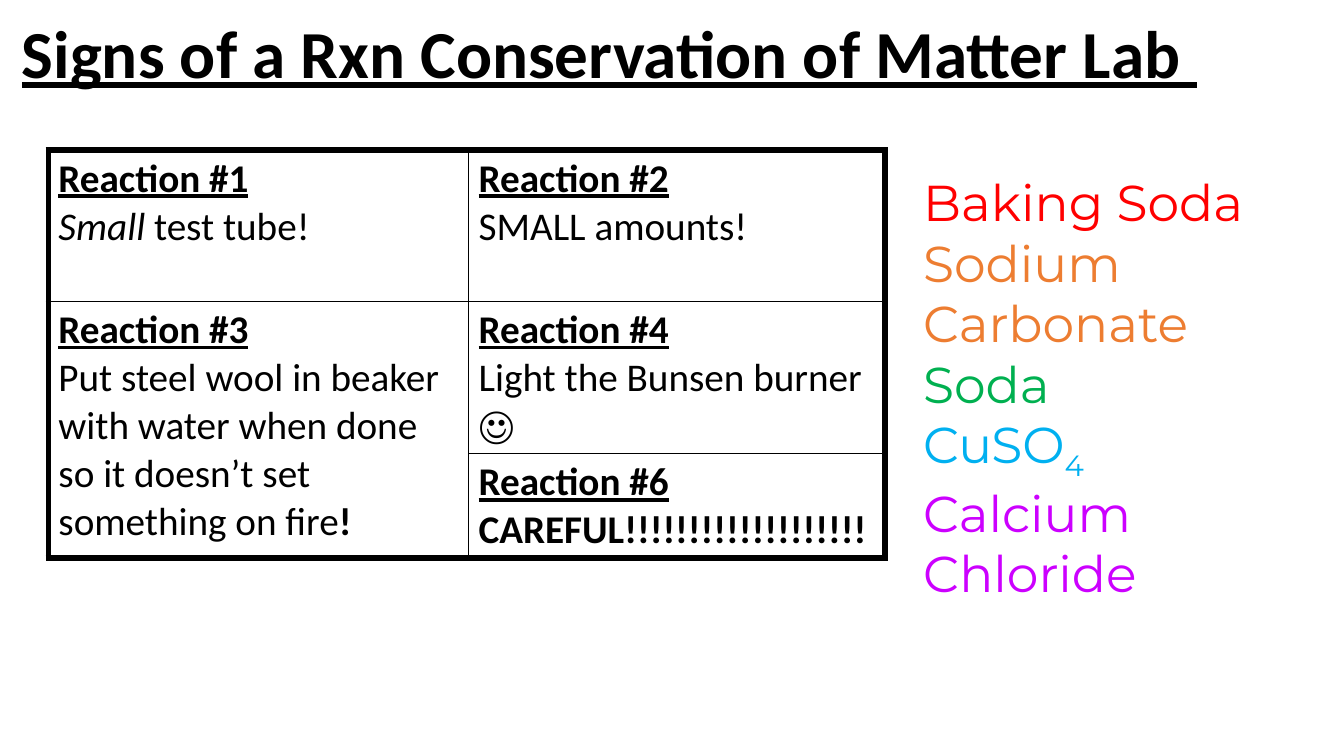
from dataclasses import dataclass, field

from lxml import etree
from pptx import Presentation
from pptx.dml.color import RGBColor
from pptx.enum import text as t
from pptx.oxml import ns
from pptx.util import Cm, Pt

BLACK = RGBColor(0x00, 0x00, 0x00)
RED = RGBColor(0xFF, 0x00, 0x00)
ORANGE = RGBColor(0xED, 0x7D, 0x31)
GREEN = RGBColor(0x00, 0xB0, 0x50)
BLUE = RGBColor(0x00, 0xB0, 0xF0)
PURPLE = RGBColor(0xCC, 0x00, 0xFF)

THICK, THIN = Pt(4.5), Pt(1)
LINE_BREAK = "\n"


@dataclass
class Span:
    """A piece of text with its own font settings."""
    text: str
    font: dict = field(default_factory=dict)
    color: RGBColor = BLACK
    baseline: int = 0


@dataclass
class Reaction:
    row: int
    column: int
    number: int
    note: list[Span]


BOLD = {"bold": True}
HEADING = {"bold": True, "underline": True}

CHEMICALS = [
    [Span("Baking Soda", color=RED)],
    [Span("Sodium Carbonate", color=ORANGE)],
    [Span("Soda", color=GREEN), Span(LINE_BREAK),
     Span("CuSO", color=BLUE), Span("4", color=BLUE, baseline=-25)],
    [Span("Calcium Chloride", color=PURPLE)],
]

REACTIONS = [
    Reaction(0, 0, 1, [Span("Small", {"italic": True}), Span(" test tube!")]),
    Reaction(0, 1, 2, [Span("SMALL amounts!")]),
    Reaction(1, 0, 3, [Span("Put steel wool in beaker with water when done "
                            "so it doesn’t set something on fire"),
                       Span("!", BOLD)]),
    Reaction(1, 1, 4, [Span("Light the Bunsen burner ☺")]),
    Reaction(2, 1, 6, [Span("CAREFUL!!!!!!!!!!!!!!!!!!!", BOLD)]),
]

COLUMN_WIDTHS = [Cm(10.59), Cm(10.49)]
ROW_HEIGHTS = [Cm(3.81), Cm(3.84), Cm(2.6)]


def set_attributes(target, values: dict) -> None:
    for name, value in values.items():
        setattr(target, name, value)


def write_paragraphs(frame, lines: list[list[Span]], font: dict, layout: dict) -> None:
    """Fill a text frame with one paragraph for each list of spans."""
    for index, spans in enumerate(lines):
        paragraph = frame.paragraphs[0] if index == 0 else frame.add_paragraph()
        set_attributes(paragraph, layout)
        for span in spans:
            if span.text == LINE_BREAK:
                paragraph.add_line_break()
                continue
            run = paragraph.add_run()
            run.text = span.text
            set_attributes(run.font, {"bold": False, **font, **span.font})
            run.font.color.rgb = span.color
            if span.baseline:
                run.font._element.set("baseline", str(span.baseline * 1000))


def remove_bullets(frame) -> None:
    for paragraph in frame.paragraphs:
        properties = paragraph._p.get_or_add_pPr()
        properties.set("marL", "0")
        properties.set("indent", "0")
        etree.SubElement(properties, ns.qn("a:buNone"))


def set_border(cell, side: str, width: int) -> None:
    line = etree.SubElement(cell._tc.get_or_add_tcPr(), ns.qn(f"a:ln{side}"), w=str(width))
    fill = etree.SubElement(line, ns.qn("a:solidFill"))
    etree.SubElement(fill, ns.qn("a:srgbClr"), val=str(BLACK))


def format_cell(cell, row: int, column: int) -> None:
    """Thick lines on the outer edge of the table, thin lines inside."""
    last_row = row + (cell.span_height if cell.is_merge_origin else 1)
    outer = {
        "L": column == 0,
        "R": column == len(COLUMN_WIDTHS) - 1,
        "T": row == 0,
        "B": last_row == len(ROW_HEIGHTS),
    }
    for side, is_outer in outer.items():
        if not (side == "T" and cell.is_spanned):
            set_border(cell, side, THICK if is_outer else THIN)
    cell.fill.background()


def add_title(slide) -> None:
    title = slide.shapes.title
    set_attributes(title, {"left": Cm(0.3), "top": Cm(-0.41),
                           "width": Cm(30.73), "height": Cm(3.68)})
    set_attributes(title.text_frame, {"word_wrap": True,
                                      "auto_size": t.MSO_AUTO_SIZE.NONE,
                                      "vertical_anchor": t.MSO_ANCHOR.MIDDLE})
    write_paragraphs(title.text_frame,
                     [[Span("Signs of a Rxn Conservation of Matter Lab ", HEADING)]],
                     {"name": "Calibri", "size": Pt(48)},
                     {"alignment": t.PP_ALIGN.LEFT, "line_spacing": 0.9})


def add_chemicals(slide) -> None:
    body = slide.placeholders[1]
    set_attributes(body, {"left": Cm(23.01), "top": Cm(4.19),
                          "width": Cm(10.01), "height": Cm(11.02)})
    set_attributes(body.text_frame, {"word_wrap": True,
                                     "auto_size": t.MSO_AUTO_SIZE.SHAPE_TO_FIT_TEXT,
                                     "vertical_anchor": t.MSO_ANCHOR.TOP})
    write_paragraphs(body.text_frame, CHEMICALS,
                     {"name": "Montserrat", "size": Pt(36)},
                     {"alignment": t.PP_ALIGN.LEFT, "space_before": Pt(0)})
    remove_bullets(body.text_frame)


def add_reactions(slide) -> None:
    table = slide.shapes.add_table(len(ROW_HEIGHTS), len(COLUMN_WIDTHS),
                                   Cm(1.22), Cm(3.78),
                                   sum(COLUMN_WIDTHS), sum(ROW_HEIGHTS)).table
    set_attributes(table, {"first_row": False, "horz_banding": False})
    for column, width in zip(table.columns, COLUMN_WIDTHS):
        column.width = width
    for row, height in zip(table.rows, ROW_HEIGHTS):
        row.height = height
    table.cell(1, 0).merge(table.cell(2, 0))
    for row in range(len(ROW_HEIGHTS)):
        for column in range(len(COLUMN_WIDTHS)):
            format_cell(table.cell(row, column), row, column)
    for reaction in REACTIONS:
        heading = Span(f"Reaction #{reaction.number}", HEADING)
        write_paragraphs(table.cell(reaction.row, reaction.column).text_frame,
                         [[heading], reaction.note],
                         {"name": "Calibri", "size": Pt(28)},
                         {"alignment": t.PP_ALIGN.LEFT})


def main() -> None:
    presentation = Presentation()
    set_attributes(presentation, {"slide_width": Cm(33.87), "slide_height": Cm(19.05)})
    slide = presentation.slides.add_slide(presentation.slide_layouts[1])
    add_title(slide)
    add_chemicals(slide)
    add_reactions(slide)
    presentation.save("out.pptx")


if __name__ == "__main__":
    main()
